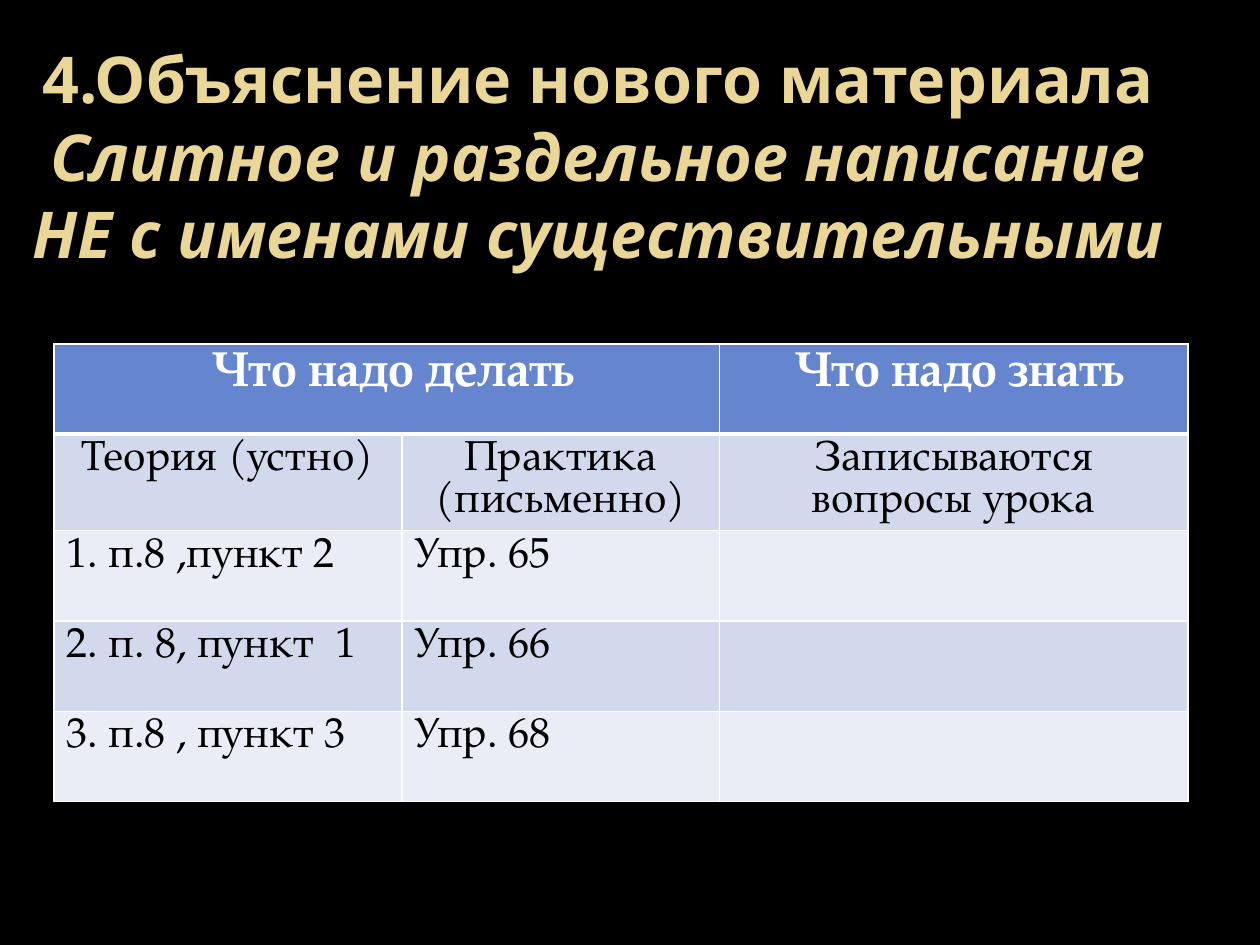
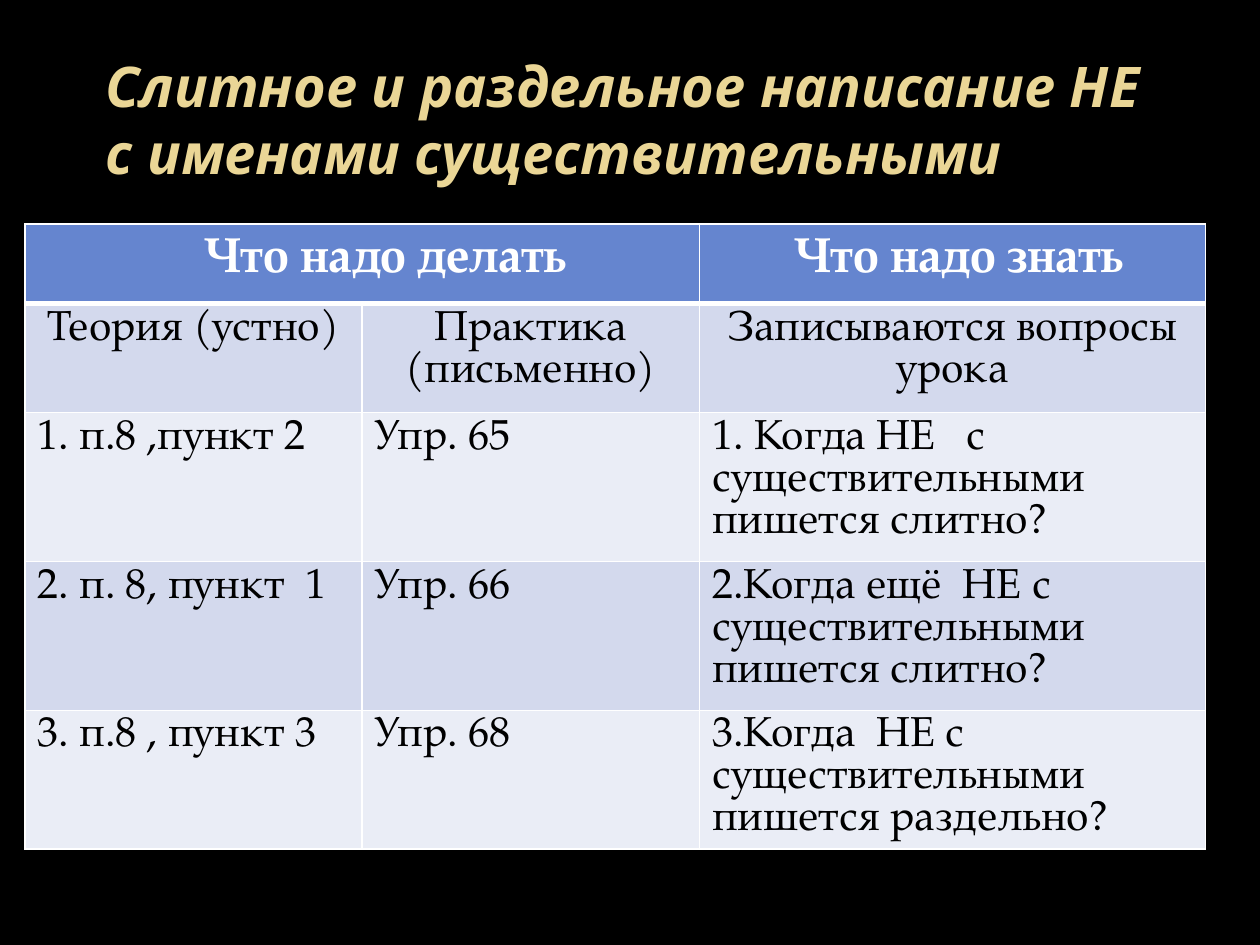
from lxml import etree
from pptx import Presentation
from pptx.dml.color import RGBColor
from pptx.enum.text import MSO_ANCHOR, PP_ALIGN
from pptx.oxml.ns import qn
from pptx.util import Cm, Pt

BLACK = RGBColor(0x00, 0x00, 0x00)
WHITE = RGBColor(0xFF, 0xFF, 0xFF)
GOLD = RGBColor(0xEA, 0xD6, 0x96)
BLUE = RGBColor(0x65, 0x85, 0xCF)
BAND_DARK = RGBColor(0xD3, 0xD9, 0xED)
BAND_LIGHT = RGBColor(0xEA, 0xED, 0xF6)
TITLE_FONT = "Noto Sans"
TABLE_FONT = "TeX Gyre Pagella"
LEFT, CENTER = PP_ALIGN.LEFT, PP_ALIGN.CENTER
TOP, MIDDLE = MSO_ANCHOR.TOP, MSO_ANCHOR.MIDDLE

TOPIC = "Слитное и раздельное написание НЕ с именами существительными"
HEADERS = ["Что надо делать", " Что надо знать"]
SUBHEADERS = ["Теория (устно)", "Практика (письменно)", "Записываются вопросы урока"]
TASKS = [
    ("1. п.8 ,пункт 2", "Упр. 65"),
    ("2. п. 8, пункт  1", "Упр. 66"),
    ("3. п.8 , пункт 3", "Упр. 68"),
]
QUESTIONS = [
    "1. Когда НЕ   с существительными пишется слитно?",
    "2.Когда ещё  НЕ с существительными пишется слитно?",
    "3.Когда  НЕ с существительными пишется раздельно?",
]


class Deck:
    def __init__(self):
        self.prs = Presentation()
        self.prs.slide_width, self.prs.slide_height = Cm(25.4), Cm(19.05)
        self.slide = None

    def add_slide(self):
        self.slide = self.prs.slides.add_slide(self.prs.slide_layouts[6])
        fill = self.slide.background.fill
        fill.solid()
        fill.fore_color.rgb = BLACK

    def style(self, p, font, size, color, bold, align):
        p.alignment = align
        p.line_spacing = Pt(size * 1.2) if font == TITLE_FONT else Pt(size)
        p.font.name, p.font.size, p.font.bold = font, Pt(size), bold
        p.font.color.rgb = color

    def title(self, box, size, align, anchor, lead=""):
        tf = self.slide.shapes.add_textbox(*map(Cm, box)).text_frame
        tf.word_wrap = True
        tf.vertical_anchor = anchor
        p = tf.paragraphs[0]
        self.style(p, TITLE_FONT, size, GOLD, True, align)
        if lead:
            p.add_run().text = lead
            p.add_line_break()
        r = p.add_run()
        r.text = TOPIC
        r.font.italic = True

    def borders(self, cell, top, bottom):
        tcPr = cell._tc.get_or_add_tcPr()
        for i, (side, width) in enumerate(zip("LRTB", (1, 1, top, bottom))):
            ln = etree.Element(qn(f"a:ln{side}"), w=str(Pt(width)))
            fill = etree.SubElement(ln, qn("a:solidFill"))
            etree.SubElement(fill, qn("a:srgbClr"), val=str(WHITE))
            tcPr.insert(i, ln)

    def cell(self, cell, text, row, align):
        header = row == 0
        cell.fill.solid()
        cell.fill.fore_color.rgb = BLUE if header else BAND_DARK if row % 2 else BAND_LIGHT
        self.borders(cell, 3 if row == 1 else 1, 3 if header else 1)
        cell.text = text
        self.style(cell.text_frame.paragraphs[0], TABLE_FONT, 28 if header else 24,
                   WHITE if header else BLACK, header, align)

    def lesson_table(self, left, top, widths, heights, questions, header_indent, header_drop):
        rows = [(HEADERS[0], "", HEADERS[1]), SUBHEADERS]
        rows += [(*task, question) for task, question in zip(TASKS, questions)]
        frame = self.slide.shapes.add_table(len(rows), len(widths), Cm(left), Cm(top),
                                            Cm(sum(widths)), Cm(sum(heights)))
        table = frame.table
        for column, width in zip(table.columns, widths):
            column.width = Cm(width)
        for i, (texts, height) in enumerate(zip(rows, heights)):
            table.rows[i].height = Cm(height)
            for j, text in enumerate(texts):
                centred = i == 1 or (i == 0 and j == 2)
                self.cell(table.cell(i, j), text, i, CENTER if centred else LEFT)
                if i == 0:
                    table.cell(i, j).margin_top = Cm(header_drop)
        table.cell(0, 0).merge(table.cell(0, 1))
        table.cell(0, 0).margin_left = Cm(header_indent)


def main():
    deck = Deck()

    deck.add_slide()
    deck.title((0, 0.76, 24.13, 4.75), 36.9, CENTER, MIDDLE, "4.Объяснение нового материала")
    deck.lesson_table(1.09, 6.93, (7.01, 6.4, 9.45), [1.82] * 5, [""] * 3, 3.2, 0.13)

    deck.add_slide()
    deck.lesson_table(0.5, 4.52, (6.8, 6.8, 10.2), (1.6, 2.2, 3, 3, 1.82), QUESTIONS, 3.63, 0.23)
    deck.title((1.88, 0.91, 21.59, 3), 32, LEFT, TOP)

    deck.prs.save("out.pptx")


if __name__ == "__main__":
    main()
